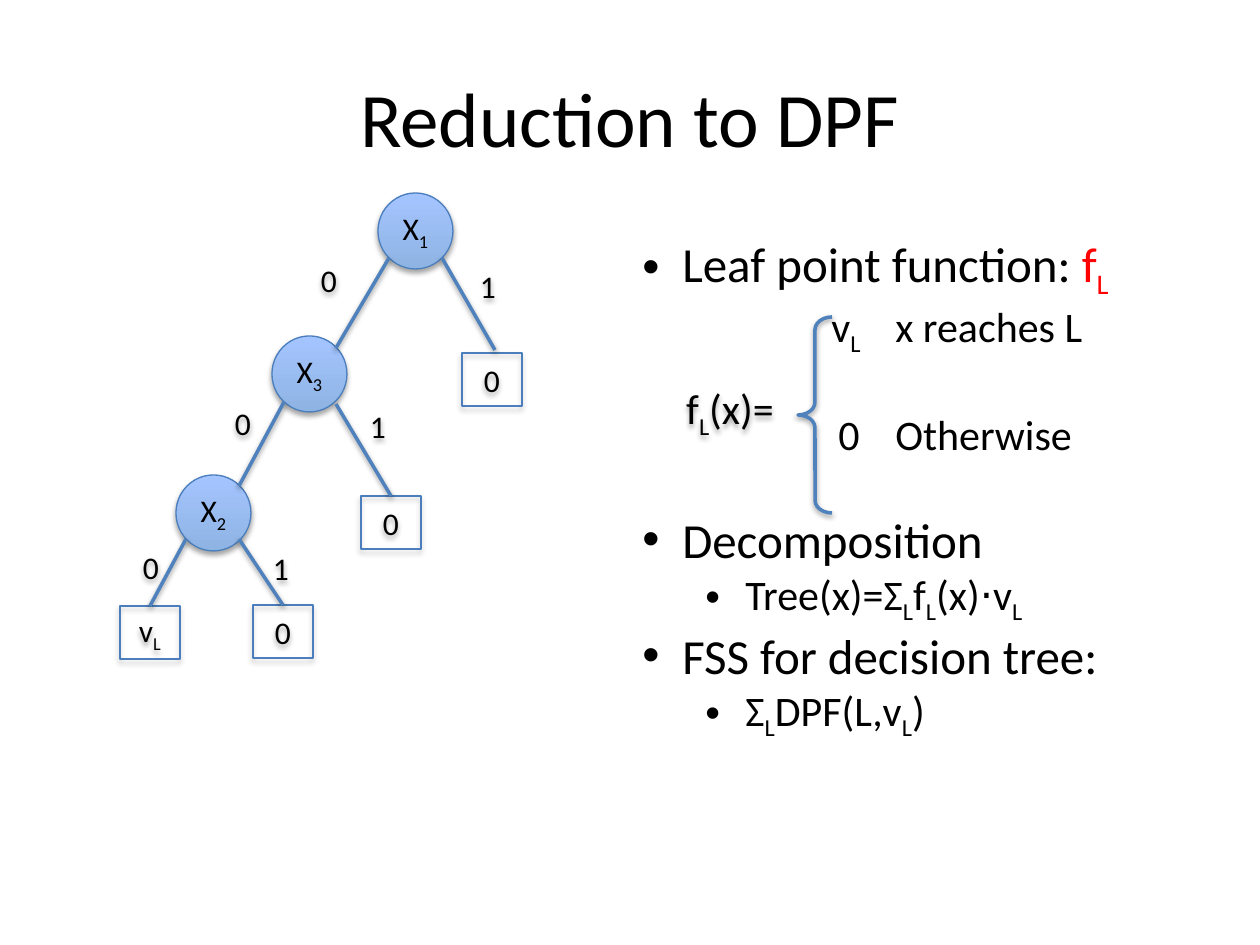
from dataclasses import dataclass
from typing import Optional

from lxml import etree
from pptx import Presentation
from pptx import util as u
from pptx.dml.color import RGBColor
from pptx.enum import shapes, text
from pptx.oxml.ns import qn

PX = 914400 / 126
FONT = "Calibri"
BLACK = RGBColor(0x00, 0x00, 0x00)
RED = RGBColor(0xFF, 0x00, 0x00)
OUTLINE = RGBColor(0x4B, 0x7E, 0xBC)
EDGE_BLUE = RGBColor(0x4F, 0x81, 0xBD)
NODE_BOTTOM = RGBColor(0x8E, 0xB4, 0xE3)
NODE_TOP = RGBColor(0xA4, 0xC4, 0xFF)
SOLID_SHADOW = (35, 1.8)
LINE_SHADOW = (38, 1.6)


@dataclass(frozen=True)
class Box:
    left: int
    top: int
    width: int
    height: int
    words: str
    size: int = 18


@dataclass(frozen=True)
class Edge:
    start: tuple[int, int]
    end: tuple[int, int]
    leaf: Optional[int] = None


@dataclass(frozen=True)
class Line:
    words: str
    size: int
    margin: int
    indent: int
    bullet: bool = True
    before: int = 0
    accent: str = ""


NODES = [Box(left, top, 75, 76, words) for left, top, words in
         [(378, 193, "X_1"), (176, 475, "X_2"), (272, 336, "X_3")]]
LEAVES = [Box(left, top, 60, 53, words) for left, top, words in
          [(120, 606, "v_L"), (462, 353, "0"), (361, 496, "0"), (253, 605, "0")]]
EDGES = [
    Edge((389, 258), (336, 348)),
    Edge((284, 402), (239, 486)),
    Edge((186, 539), (150, 606), 0),
    Edge((442, 258), (495, 350)),
    Edge((336, 404), (389, 496), 2),
    Edge((239, 539), (284, 605), 3),
]
LABELS = [Box(left, top, 38, 37, words) for left, top, words in
          [(310, 261, "0"), (224, 404, "0"), (132, 548, "0"),
           (469, 267, "1"), (359, 407, "1"), (262, 549, "1")]]
TITLE = Box(63, 38, 1134, 158, "Reduction to DPF", 44)
FORMULA = Box(664, 378, 132, 67, "f_L(x)=", 24)
BODY = [
    Line("Leaf point function: ", 28, 40, -40, accent="f_L"),
    Line("v_L\tx reaches L", 24, 253, -64, bullet=False),
    Line("0\tOtherwise", 24, 253, -57, bullet=False, before=29),
    Line("Decomposition", 28, 40, -40, before=29),
    Line("Tree(x)=Σ_Lf_L(x)⋅v_L", 24, 103, -40),
    Line("FSS for decision tree:", 28, 40, -40),
    Line("Σ_LDPF(L,v_L)", 24, 103, -40),
]


def px(length: float) -> int:
    return round(length * PX)


def add_shadow(shape, look: tuple[int, float]) -> None:
    alpha, distance = look
    effects = etree.SubElement(shape._element.spPr, qn("a:effectLst"))
    shadow = etree.SubElement(effects, qn("a:outerShdw"), blurRad=str(u.Pt(3.1)),
                              dist=str(u.Pt(distance)), dir="5400000", rotWithShape="0")
    color = etree.SubElement(shadow, qn("a:srgbClr"), val="000000")
    etree.SubElement(color, qn("a:alpha"), val=str(alpha * 1000))


def add_run(paragraph, words: str, color: Optional[RGBColor], subscript: bool = False) -> None:
    if not words:
        return
    run = paragraph.add_run()
    run.text = words
    if color is not None:
        run.font.color.rgb = color
    if subscript:
        run._r.get_or_add_rPr().set("baseline", "-25000")


def add_words(paragraph, words: str, color: Optional[RGBColor] = None) -> None:
    plain, *pieces = words.split("_")
    add_run(paragraph, plain, color)
    for piece in pieces:
        add_run(paragraph, piece[0], color, subscript=True)
        add_run(paragraph, piece[1:], color)


def set_font(paragraph, size: int) -> None:
    paragraph.font.name = FONT
    paragraph.font.size = u.Pt(size)
    paragraph.font.color.rgb = BLACK


def write_centered(shape, box: Box) -> None:
    frame = shape.text_frame
    frame.word_wrap = True
    frame.vertical_anchor = text.MSO_ANCHOR.MIDDLE
    frame.margin_left = frame.margin_right = frame.margin_top = frame.margin_bottom = 0
    paragraph = frame.paragraphs[0]
    paragraph.alignment = text.PP_ALIGN.CENTER
    set_font(paragraph, box.size)
    add_words(paragraph, box.words)


def add_text(slide, box: Box, shadowed: bool = True) -> None:
    shape = slide.shapes.add_textbox(px(box.left), px(box.top), px(box.width), px(box.height))
    write_centered(shape, box)
    if shadowed:
        add_shadow(shape, SOLID_SHADOW)


def add_box(slide, box: Box, kind: shapes.MSO_SHAPE):
    shape = slide.shapes.add_shape(kind, px(box.left), px(box.top), px(box.width), px(box.height))
    if kind == shapes.MSO_SHAPE.OVAL:
        shape.fill.gradient()
        shape.fill.gradient_angle = 90
        for stop, color in zip(shape.fill.gradient_stops, (NODE_BOTTOM, NODE_TOP)):
            stop.color.rgb = color
    else:
        shape.fill.background()
    shape.line.color.rgb = OUTLINE
    shape.line.width = u.Pt(0.75)
    add_shadow(shape, SOLID_SHADOW)
    write_centered(shape, box)
    return shape


def add_edge(slide, edge: Edge, leaves: list) -> None:
    connector = slide.shapes.add_connector(
        shapes.MSO_CONNECTOR.STRAIGHT, *map(px, edge.start + edge.end))
    if edge.leaf is not None:
        connector.end_connect(leaves[edge.leaf], 0)
    connector.line.color.rgb = EDGE_BLUE
    connector.line.width = u.Pt(2)
    add_shadow(connector, LINE_SHADOW)


def add_brace(slide) -> None:
    brace = slide.shapes.add_shape(
        shapes.MSO_SHAPE.LEFT_BRACE, px(798), px(317), px(34), px(196))
    brace.adjustments[0] = 0.375
    brace.fill.background()
    brace.line.color.rgb = EDGE_BLUE
    brace.line.width = u.Pt(2)
    add_shadow(brace, LINE_SHADOW)


def add_body(slide) -> None:
    frame = slide.shapes.add_textbox(px(630), px(227), px(615), px(547)).text_frame
    frame.word_wrap = True
    for index, line in enumerate(BODY):
        paragraph = frame.add_paragraph() if index else frame.paragraphs[0]
        properties = paragraph._p.get_or_add_pPr()
        properties.set("marL", str(px(line.margin)))
        properties.set("indent", str(px(line.indent)))
        if line.bullet:
            etree.SubElement(properties, qn("a:buFont"), typeface="Arial")
            etree.SubElement(properties, qn("a:buChar"), char="•")
        paragraph.space_before = u.Pt(line.before)
        set_font(paragraph, line.size)
        add_words(paragraph, line.words)
        add_words(paragraph, line.accent, RED)


def main() -> None:
    presentation = Presentation()
    presentation.slide_width = u.Inches(10)
    presentation.slide_height = u.Inches(7.5)
    slide = presentation.slides.add_slide(presentation.slide_layouts[6])
    add_text(slide, TITLE, shadowed=False)
    for node in NODES:
        add_box(slide, node, shapes.MSO_SHAPE.OVAL)
    leaves = [add_box(slide, leaf, shapes.MSO_SHAPE.RECTANGLE) for leaf in LEAVES]
    for edge in EDGES:
        add_edge(slide, edge, leaves)
    for label in LABELS:
        add_text(slide, label)
    add_body(slide)
    add_brace(slide)
    add_text(slide, FORMULA)
    presentation.save("out.pptx")


if __name__ == "__main__":
    main()
